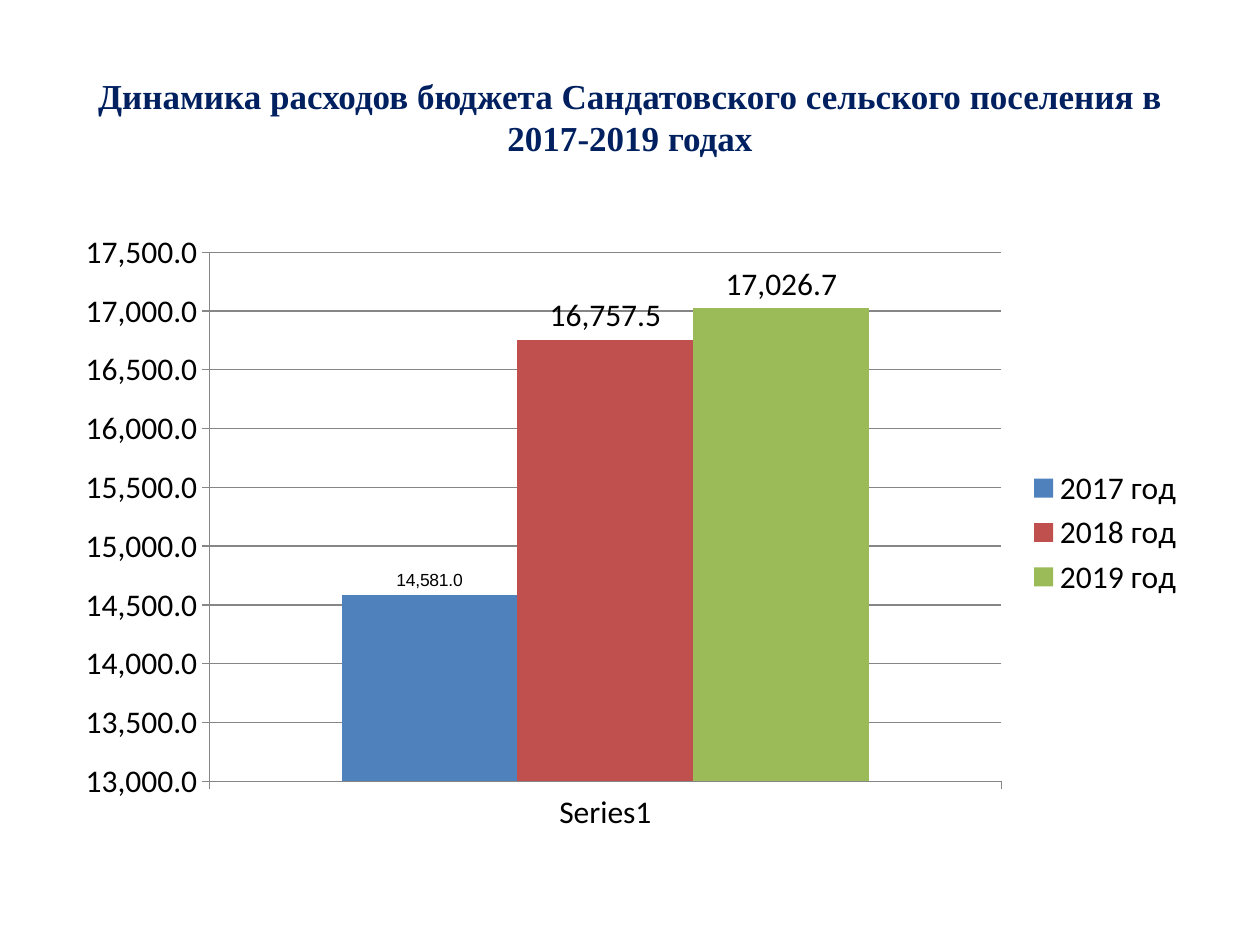
import dataclasses

import pptx
import pptx.chart.data
import pptx.chart.series
import pptx.dml.color
import pptx.enum.chart
import pptx.enum.text
import pptx.util

Cm = pptx.util.Cm
Pt = pptx.util.Pt

COLOURS = {
    "heading": "002060",
    "text": "000000",
    "grid": "868686",
    "blue": "4F81BD",
    "red": "C0504D",
    "green": "9BBB59",
}
NUMBER_FORMAT = "#,##0.0"


@dataclasses.dataclass(frozen=True)
class YearSpending:
    """Spending of one budget year and the look of its column."""

    year: str
    amount: float
    colour: str
    label_font: str = "Calibri"
    label_size: int = 18


SPENDING = [
    YearSpending("2017 год", 14581.0, "blue", "Arial", 10),
    YearSpending("2018 год", 16757.5, "red"),
    YearSpending("2019 год", 17026.7, "green"),
]


def rgb(colour: str) -> pptx.dml.color.RGBColor:
    """Return the named colour."""
    return pptx.dml.color.RGBColor.from_string(COLOURS[colour])


def style_font(font: pptx.text.text.Font, face: str, size: int, colour: str) -> None:
    """Set face, size and colour of a font."""
    font.name = face
    font.size = Pt(size)
    font.color.rgb = rgb(colour)


def add_heading(slide: pptx.slide.Slide) -> None:
    """Add the slide heading."""
    heading = slide.shapes.add_textbox(Cm(1.27), Cm(0.76), Cm(22.86), Cm(3.18))
    frame = heading.text_frame
    frame.word_wrap = True
    frame.vertical_anchor = pptx.enum.text.MSO_ANCHOR.MIDDLE
    frame.text = (
        "Динамика расходов бюджета Сандатовского сельского поселения в 2017-2019 годах"
    )
    paragraph = frame.paragraphs[0]
    paragraph.alignment = pptx.enum.text.PP_ALIGN.CENTER
    run = paragraph.runs[0]
    style_font(run.font, "Times New Roman", 20, "heading")
    run.font.bold = True


def style_column(
    column: pptx.chart.series.BarSeries, spending: YearSpending
) -> None:
    """Colour the column of one year and label it with its amount."""
    column.format.fill.solid()
    column.format.fill.fore_color.rgb = rgb(spending.colour)
    column.invert_if_negative = False
    label = column.points[0].data_label
    style_font(label.font, spending.label_font, spending.label_size, "text")
    label.position = pptx.enum.chart.XL_LABEL_POSITION.OUTSIDE_END


def add_spending_chart(slide: pptx.slide.Slide) -> None:
    """Add the column chart of yearly spending."""
    data = pptx.chart.data.CategoryChartData(number_format=NUMBER_FORMAT)
    data.categories = ["Series1"]
    for spending in SPENDING:
        data.add_series(spending.year, [spending.amount])
    chart = slide.shapes.add_chart(
        pptx.enum.chart.XL_CHART_TYPE.COLUMN_CLUSTERED,
        Cm(1.27), Cm(4.45), Cm(22.86), Cm(12.57), data,
    ).chart
    chart.has_title = False
    style_font(chart.font, "Calibri", 18, "text")
    chart.has_legend = True
    chart.legend.position = pptx.enum.chart.XL_LEGEND_POSITION.RIGHT
    chart.legend.include_in_layout = False
    plot = chart.plots[0]
    plot.vary_by_categories = False
    plot.gap_width = 150
    plot.overlap = 0
    for column, spending in zip(plot.series, SPENDING):
        style_column(column, spending)
    amounts = chart.value_axis
    amounts.minimum_scale = 13000
    amounts.maximum_scale = 17500
    amounts.major_unit = 500
    amounts.has_major_gridlines = True
    amounts.tick_labels.number_format = NUMBER_FORMAT
    amounts.tick_labels.number_format_is_linked = False
    for part in (amounts, amounts.major_gridlines, chart.category_axis):
        part.format.line.color.rgb = rgb("grid")
        part.format.line.width = Pt(0.75)


def main() -> None:
    """Build and save the presentation."""
    presentation = pptx.Presentation()
    presentation.slide_width = Cm(25.4)
    presentation.slide_height = Cm(19.05)
    slide = presentation.slides.add_slide(presentation.slide_layouts[6])
    add_heading(slide)
    add_spending_chart(slide)
    presentation.save("out.pptx")


if __name__ == "__main__":
    main()
